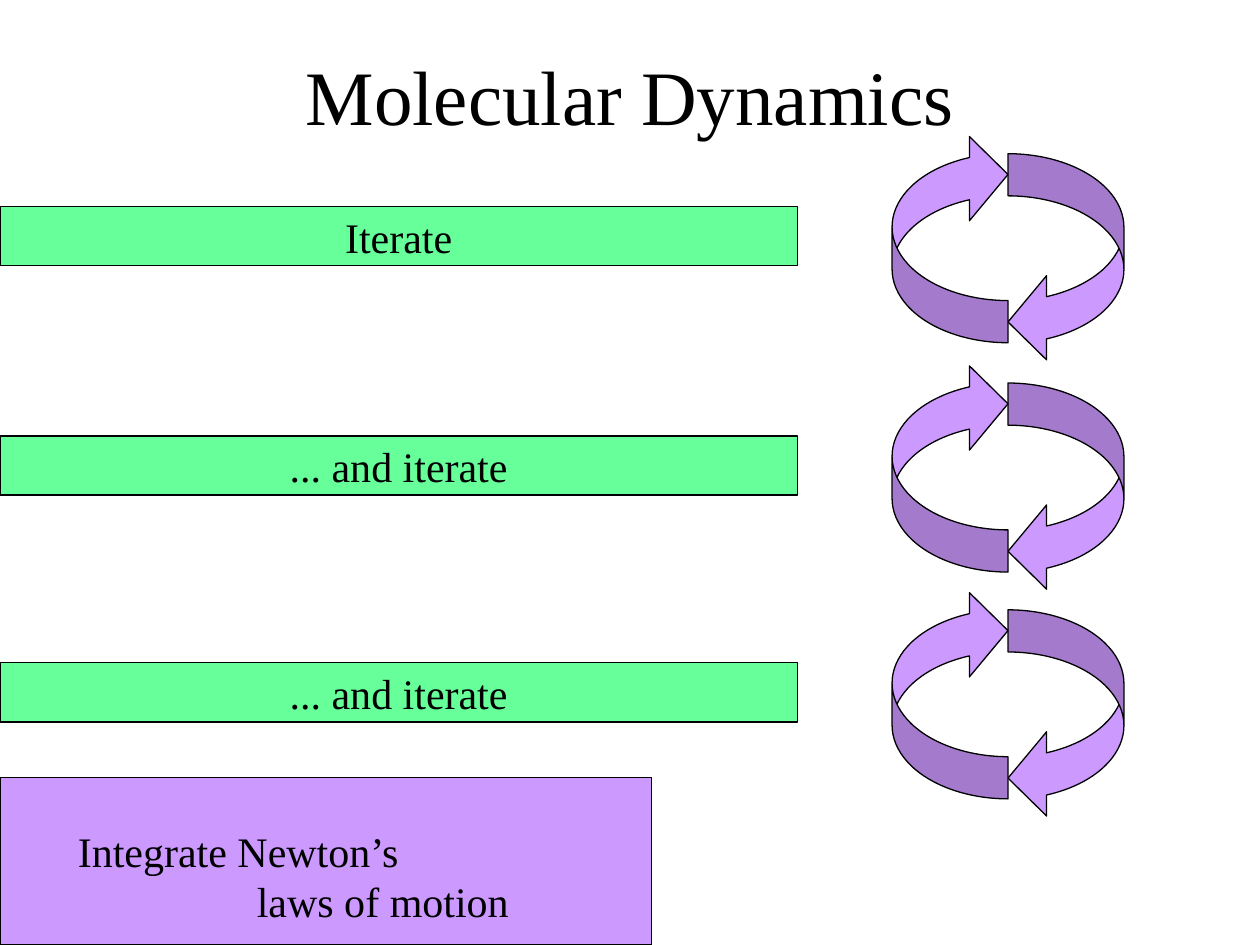
from pptx import Presentation
from pptx.dml.color import RGBColor
from pptx.enum.shapes import MSO_SHAPE
from pptx.enum.text import MSO_ANCHOR, PP_ALIGN
from pptx.util import Inches, Pt

COLORS = {"text": "000000", "outline": "000000", "step": "66FF99", "motion": "CC99FF"}


def add_block(preset, left, top, width, height, color):
    block = slide.shapes.add_shape(
        preset, Inches(left), Inches(top), Inches(width), Inches(height)
    )
    block.shadow.inherit = False
    block.fill.solid()
    block.fill.fore_color.rgb = RGBColor.from_string(COLORS[color])
    block.line.color.rgb = RGBColor.from_string(COLORS["outline"])
    block.line.width = Pt(0.75)
    return block


def write(box, text, size, align, anchor):
    frame = box.text_frame
    frame.word_wrap = True
    frame.vertical_anchor = anchor
    frame.text = text
    paragraph = frame.paragraphs[0]
    paragraph.alignment = align
    for run in paragraph.runs:
        run.font.size = Pt(size)
        run.font.name = "Times New Roman"
        run.font.color.rgb = RGBColor.from_string(COLORS["text"])
    return paragraph


presentation = Presentation()
presentation.slide_width = Inches(10)
presentation.slide_height = Inches(7.5)
slide = presentation.slides.add_slide(presentation.slide_layouts[6])

title = slide.shapes.add_textbox(Inches(0), Inches(0.42), Inches(10), Inches(0.67))
write(title, "Molecular Dynamics", 44, PP_ALIGN.CENTER, MSO_ANCHOR.MIDDLE)

steps = [(1.05, "Iterate"), (2.87, "... and iterate"), (4.67, "... and iterate")]
for top, label in steps:
    for left, offset, rotation in [(8, 0.17, 0), (7.08, 0, 180)]:
        arrow = add_block(
            MSO_SHAPE.CURVED_LEFT_ARROW, left, top + offset, 0.92, 1.67, "motion"
        )
        arrow.rotation = rotation
        for index, value in enumerate([0.364, 0.727, 0.333]):
            arrow.adjustments[index] = value
    step = add_block(MSO_SHAPE.RECTANGLE, 0, top + 0.59, 6.33, 0.47, "step")
    write(step, label, 24, PP_ALIGN.CENTER, MSO_ANCHOR.MIDDLE)

add_block(MSO_SHAPE.RECTANGLE, 0, 6.17, 5.17, 1.33, "motion")
newton = slide.shapes.add_textbox(Inches(0.52), Inches(6.5), Inches(5.5), Inches(0.82))
laws = write(
    newton, "Integrate Newton’s\vlaws of motion", 24, PP_ALIGN.LEFT, MSO_ANCHOR.TOP
)
indent = Inches(1.42)
properties = laws._p.get_or_add_pPr()
properties.set("marL", str(indent))
properties.set("indent", str(-indent))

presentation.save("out.pptx")
